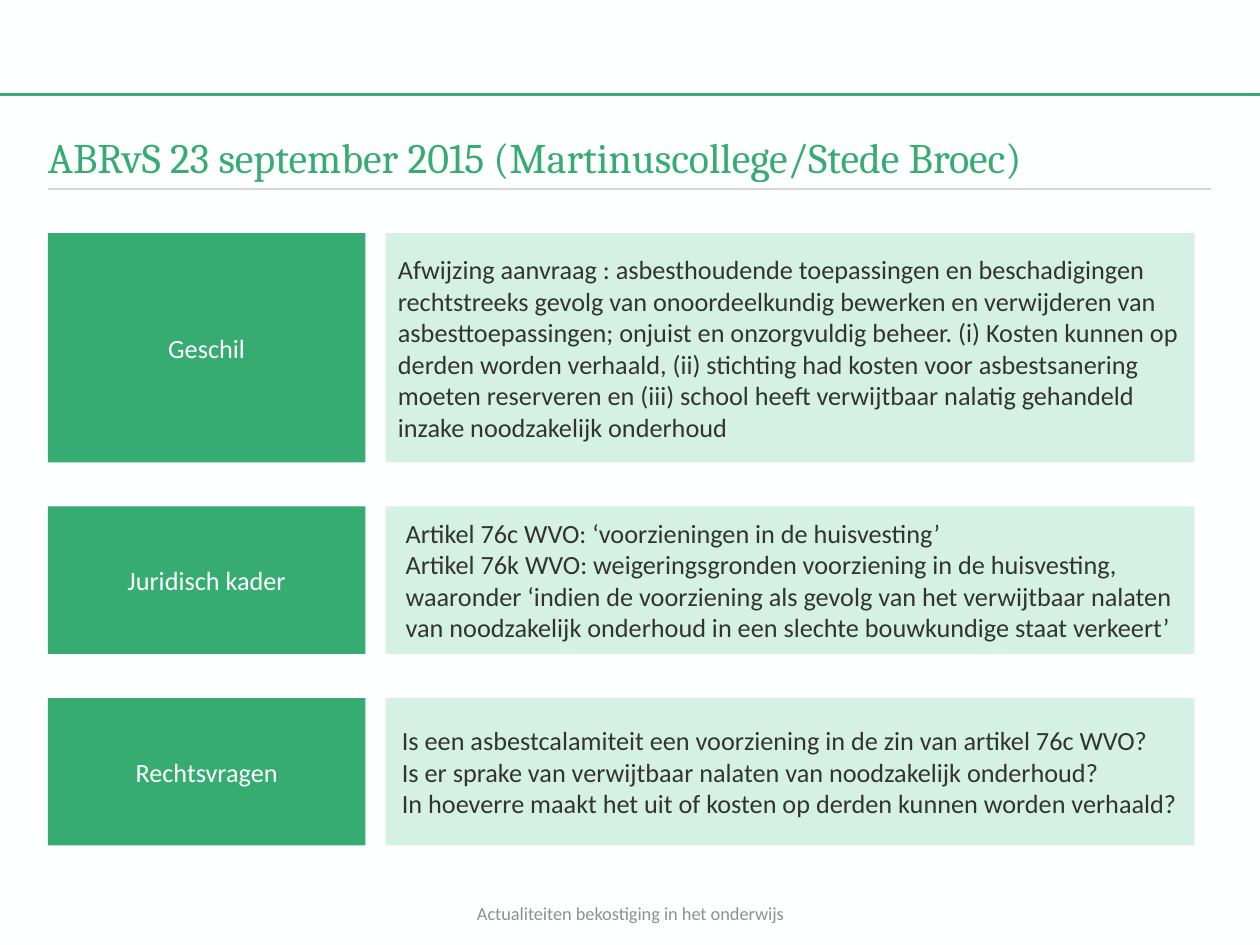
from dataclasses import dataclass

from lxml import etree
from pptx import Presentation
from pptx.dml.color import RGBColor
from pptx.enum.shapes import MSO_CONNECTOR, MSO_SHAPE
from pptx.enum.text import MSO_ANCHOR, PP_ALIGN
from pptx.oxml.ns import qn
from pptx.util import Inches, Pt

LEFT, CENTER = PP_ALIGN.LEFT, PP_ALIGN.CENTER
TOP, MIDDLE = MSO_ANCHOR.TOP, MSO_ANCHOR.MIDDLE
RECT, LINE = MSO_SHAPE.RECTANGLE, MSO_CONNECTOR.STRAIGHT


@dataclass(frozen=True)
class Theme:
    paper: RGBColor = RGBColor.from_string("FEFFFF")
    green: RGBColor = RGBColor.from_string("36AC73")
    mint: RGBColor = RGBColor.from_string("D4F1E3")
    rule: RGBColor = RGBColor.from_string("D7D5D6")
    ink: RGBColor = RGBColor.from_string("333333")
    gray: RGBColor = RGBColor.from_string("909090")
    head: str = "Cambria"
    body: str = "Calibri"
    title: float = 24
    text: float = 15
    foot: float = 10.5


theme = Theme()


def write(shape, *lines, color=theme.ink, size=theme.text, face=theme.body,
          align=LEFT, anchor=MIDDLE, inset=(0, 0, 0, 0)):
    frame = shape.text_frame
    frame.word_wrap = True
    frame.vertical_anchor = anchor
    (frame.margin_left, frame.margin_top,
     frame.margin_right, frame.margin_bottom) = map(Inches, inset)
    frame.text = "\n".join(lines)
    for para in frame.paragraphs:
        para.alignment = align
        para.font.size = Pt(size)
        para.font.name = face
        para.font.color.rgb = color


deck = Presentation()
deck.slide_width, deck.slide_height = Inches(10), Inches(7.5)
slide = deck.slides.add_slide(deck.slide_layouts[5])
slide.background.fill.solid()
slide.background.fill.fore_color.rgb = theme.paper
shapes = slide.shapes

for start, end, y, color, width in [
    (0, 10, 0.75, theme.green, 1.5),
    (0.38, 9.61, 1.5, theme.rule, 1),
]:
    line = shapes.add_connector(LINE, Inches(start), Inches(y), Inches(end), Inches(y))
    line.line.color.rgb = color
    line.line.width = Pt(width)
    etree.SubElement(line._element.spPr, qn("a:effectLst"))

title = shapes.title
title.left, title.top = Inches(0.38), Inches(1.04)
title.width, title.height = Inches(9.22), Inches(0.4)
write(title, "ABRvS 23 september 2015 (Martinuscollege/Stede Broec)",
      color=theme.green, size=theme.title, face=theme.head, anchor=TOP)

rows = [
    ("Geschil", 1.82, 0.1, [
        "Afwijzing aanvraag : asbesthoudende toepassingen en beschadigingen "
        "rechtstreeks gevolg van onoordeelkundig bewerken en verwijderen van "
        "asbesttoepassingen; onjuist en onzorgvuldig beheer. (i) Kosten kunnen op "
        "derden worden verhaald, (ii) stichting had kosten voor asbestsanering "
        "moeten reserveren en (iii) school heeft verwijtbaar nalatig gehandeld "
        "inzake noodzakelijk onderhoud",
    ]),
    ("Juridisch kader", 1.17, 0.16, [
        "Artikel 76c WVO: ‘voorzieningen in de huisvesting’",
        "Artikel 76k WVO: weigeringsgronden voorziening in de huisvesting, "
        "waaronder ‘indien de voorziening als gevolg van het verwijtbaar nalaten "
        "van noodzakelijk onderhoud in een slechte bouwkundige staat verkeert’",
    ]),
    ("Rechtsvragen", 1.17, 0.13, [
        "Is een asbestcalamiteit een voorziening in de zin van artikel 76c WVO?",
        "Is er sprake van verwijtbaar nalaten van noodzakelijk onderhoud?",
        "In hoeverre maakt het uit of kosten op derden kunnen worden verhaald?",
    ]),
]
top, gap = 1.85, 0.35
for label, height, indent, lines in rows:
    for left, width, fill, color, align, pad, words in [
        (0.38, 2.52, theme.green, theme.paper, CENTER, 0.1, [label]),
        (3.06, 6.42, theme.mint, theme.ink, LEFT, indent, lines),
    ]:
        box = shapes.add_shape(RECT, Inches(left), Inches(top), Inches(width), Inches(height))
        box.shadow.inherit = False
        box.fill.solid()
        box.fill.fore_color.rgb = fill
        box.line.fill.background()
        write(box, *words, color=color, align=align, inset=(pad, 0.05, 0.1, 0.05))
    top += height + gap

foot = shapes.add_textbox(Inches(3.42), Inches(7.16), Inches(3.17), Inches(0.18))
write(foot, "Actualiteiten bekostiging in het onderwijs",
      color=theme.gray, size=theme.foot, align=CENTER)

deck.save("out.pptx")
